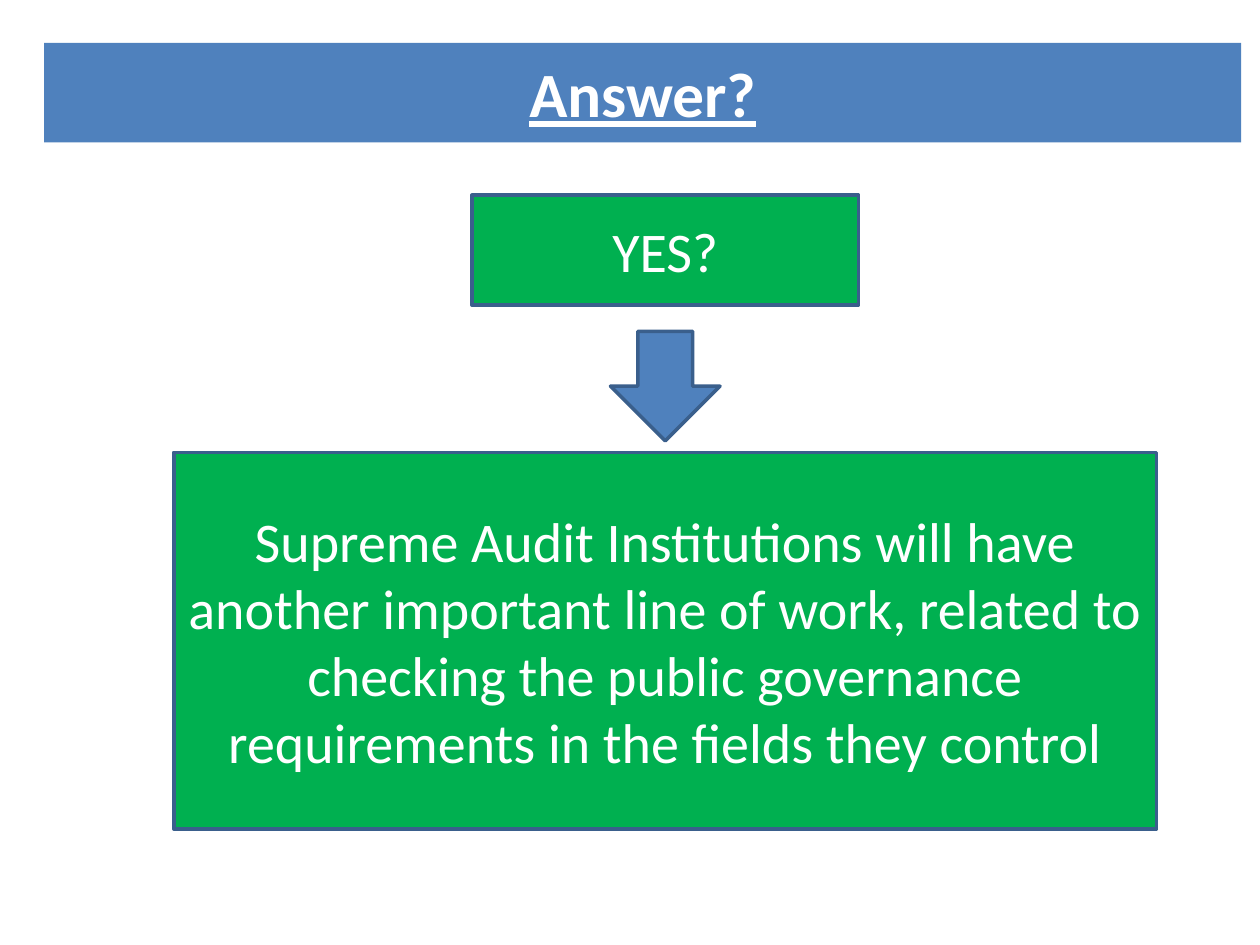
from dataclasses import dataclass

from lxml import etree
from pptx import Presentation
from pptx.dml.color import RGBColor
from pptx.enum.shapes import MSO_SHAPE
from pptx.enum.text import MSO_ANCHOR, MSO_AUTO_SIZE, PP_ALIGN
from pptx.oxml.ns import qn
from pptx.util import Inches, Pt

RECTANGLE = MSO_SHAPE.RECTANGLE
DOWN_ARROW = MSO_SHAPE.DOWN_ARROW
MIDDLE = MSO_ANCHOR.MIDDLE
CENTER = PP_ALIGN.CENTER
NO_AUTOFIT = MSO_AUTO_SIZE.NONE
TITLE_ONLY = 5
AXIS = 5.28


@dataclass(frozen=True)
class Theme:
    """Colours, font and sizes of the slide."""

    blue: RGBColor = RGBColor(0x4F, 0x81, 0xBD)
    green: RGBColor = RGBColor(0x00, 0xB0, 0x50)
    outline: RGBColor = RGBColor(0x3A, 0x5F, 0x8C)
    white: RGBColor = RGBColor(0xFF, 0xFF, 0xFF)
    font: str = "Calibri"
    title_size: int = 36
    body_size: int = 32
    line_width: int = 2


class SlideBuilder:
    """Draws the elements of one slide in a shared style."""

    def __init__(self, slide, theme):
        self.slide = slide
        self.theme = theme

    def label(self, shape, text, size):
        """Fill a shape with centred white text and return its font."""
        frame = shape.text_frame
        frame.text = text
        frame.word_wrap = True
        frame.auto_size = NO_AUTOFIT
        frame.vertical_anchor = MIDDLE
        paragraph = frame.paragraphs[0]
        paragraph.alignment = CENTER
        font = paragraph.runs[0].font
        font.name = self.theme.font
        font.size = Pt(size)
        font.color.rgb = self.theme.white
        return font

    def title(self, text, left, top, width, height):
        """Turn the title placeholder into a rounded banner."""
        banner = self.slide.shapes.title
        banner.left, banner.top = Inches(left), Inches(top)
        banner.width, banner.height = Inches(width), Inches(height)
        outline = etree.SubElement(
            banner.element.spPr, qn("a:prstGeom"), prst="roundRect")
        etree.SubElement(outline, qn("a:avLst"))
        banner.fill.solid()
        banner.fill.fore_color.rgb = self.theme.blue
        font = self.label(banner, text, self.theme.title_size)
        font.bold = True
        font.underline = True

    def block(self, kind, color, top, width, height):
        """Add an outlined shape centred on the flow axis."""
        block = self.slide.shapes.add_shape(
            kind, Inches(AXIS - width / 2), Inches(top),
            Inches(width), Inches(height))
        block.shadow.inherit = False
        block.fill.solid()
        block.fill.fore_color.rgb = color
        block.line.color.rgb = self.theme.outline
        block.line.width = Pt(self.theme.line_width)
        return block

    def statement(self, text, top, width, height):
        """Add a green box with a statement."""
        box = self.block(RECTANGLE, self.theme.green, top, width, height)
        self.label(box, text, self.theme.body_size)

    def down_arrow(self, top, size):
        """Add a blue arrow pointing to the next statement."""
        self.block(DOWN_ARROW, self.theme.blue, top, size, size)


def main():
    """Build and save the slide."""
    deck = Presentation()
    deck.slide_width, deck.slide_height = Inches(10), Inches(7.5)
    slide = deck.slides.add_slide(deck.slide_layouts[TITLE_ONLY])
    builder = SlideBuilder(slide, Theme())
    builder.title("Answer?", 0.35, 0.34, 9.5, 0.79)
    builder.statement("YES?", 1.55, 3.07, 0.87)
    builder.down_arrow(2.63, 0.87)
    builder.statement(
        "Supreme Audit Institutions will have another important line of work, "
        "related to checking the public governance requirements in the fields "
        "they control", 3.59, 7.8, 2.99)
    deck.save("out.pptx")


if __name__ == "__main__":
    main()
